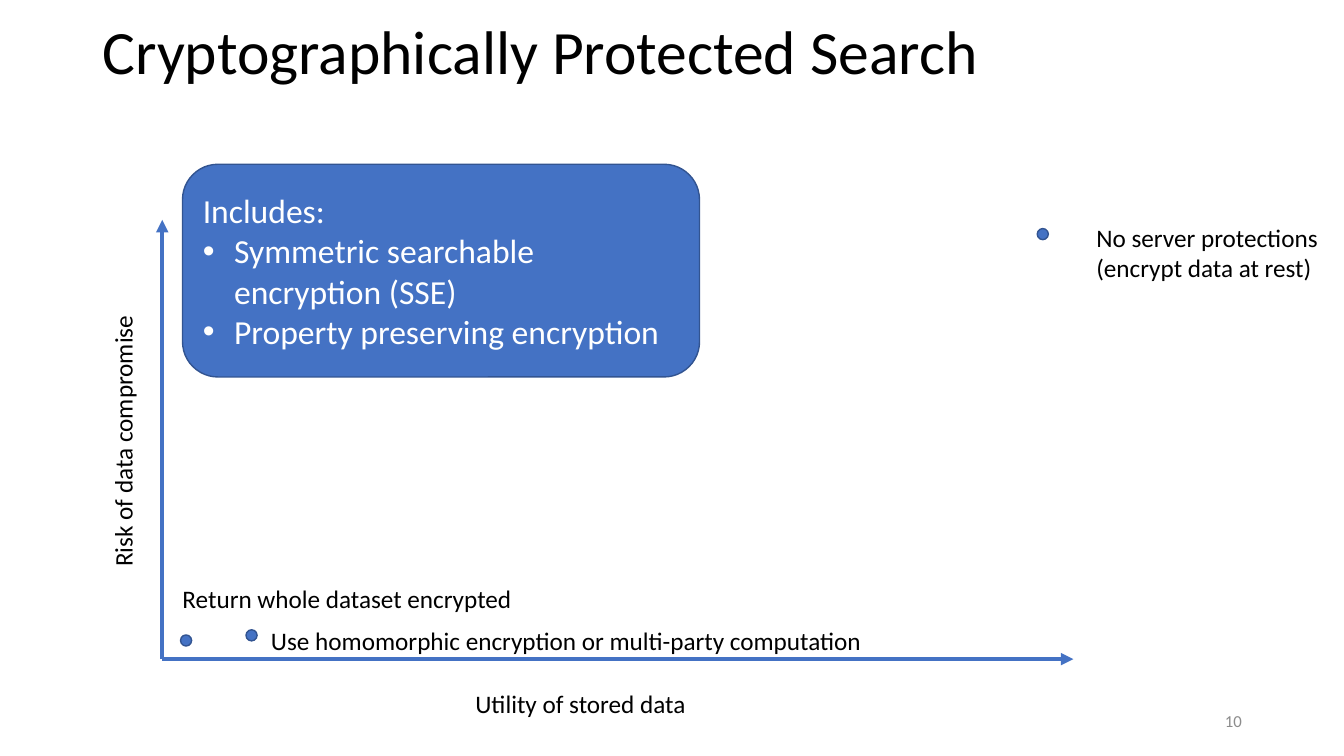
from dataclasses import dataclass

from lxml import etree
from pptx import Presentation
from pptx.dml.color import RGBColor
from pptx.enum.shapes import MSO_CONNECTOR as CONN, MSO_SHAPE as SHAPE
from pptx.enum.text import MSO_ANCHOR as ANCHOR, MSO_AUTO_SIZE as AUTO, PP_ALIGN as ALIGN
from pptx.oxml.ns import qn
from pptx.util import Cm, Pt


@dataclass(frozen=True)
class Theme:
    font: str = "Calibri"
    accent: str = "4472C4"
    outline: str = "325491"
    ink: str = "000000"
    light: str = "FFFFFF"
    muted: str = "8C8C8C"
    title: int = 44
    callout: int = 24
    label: int = 18
    footer: int = 12


THEME = Theme()


def rgb(value):
    return RGBColor.from_string(value)


def write(p, text, size=THEME.label, color=THEME.ink, align=ALIGN.LEFT):
    p.text = text
    p.alignment = align
    for r in p.runs:
        r.font.name = THEME.font
        r.font.size = Pt(size)
        r.font.color.rgb = rgb(color)


def add_label(slide, box, text, rotation=0, wrap=False, anchor=ANCHOR.TOP, **style):
    sp = slide.shapes.add_textbox(*map(Cm, box))
    sp.rotation = rotation
    tf = sp.text_frame
    tf.word_wrap = wrap
    tf.auto_size = AUTO.NONE if wrap else AUTO.SHAPE_TO_FIT_TEXT
    tf.vertical_anchor = anchor
    write(tf.paragraphs[0], text, **style)


def add_filled(slide, kind, box):
    sp = slide.shapes.add_shape(kind, *map(Cm, box))
    sp.shadow.inherit = False
    sp.fill.solid()
    sp.fill.fore_color.rgb = rgb(THEME.accent)
    sp.line.color.rgb = rgb(THEME.outline)
    sp.line.width = Pt(1)
    return sp


def add_axis(slide, start, end):
    line = slide.shapes.add_connector(CONN.STRAIGHT, *map(Cm, start + end))
    line.line.color.rgb = rgb(THEME.accent)
    line.line.width = Pt(3)
    etree.SubElement(line.line._get_or_add_ln(), qn("a:tailEnd"), type="triangle")
    etree.SubElement(line._element.spPr, qn("a:effectLst"))


def add_point(slide, center, text, offset, size):
    x, y = center
    d = 0.28
    add_filled(slide, SHAPE.OVAL, (x - d / 2, y - d / 2, d, d))
    add_label(slide, (x + offset[0], y + offset[1], *size), text)


def add_title(slide, box, text):
    sp = slide.shapes.title
    sp.left, sp.top, sp.width, sp.height = map(Cm, box)
    tf = sp.text_frame
    tf.word_wrap = True
    tf.vertical_anchor = ANCHOR.MIDDLE
    p = tf.paragraphs[0]
    write(p, text, size=THEME.title)
    p.line_spacing = 0.9


def add_plot(slide, box):
    x, y, w, h = box
    bottom = y + h
    add_axis(slide, (x, bottom), (x, y))
    add_axis(slide, (x, bottom), (x + w, bottom))
    add_label(slide, (x + 7.64, bottom + 0.61, 5.87, 1.02), "Utility of stored data")
    add_label(slide, (x - 4.45, y + 5.03, 6.91, 1.02), "Risk of data compromise", rotation=270)
    points = [
        (0.6, 0.47, "Return whole dataset encrypted", (-0.34, -1.56), (8.92, 1.02)),
        (2.25, 0.6, "Use homomorphic encryption or multi-party computation",
         (0.24, -0.39), (15.57, 1.02)),
        (22.19, 10.71, "No server protections\v(encrypt data at rest)", (1.1, -0.42), (6.3, 1.8)),
    ]
    for utility, risk, text, offset, size in points:
        add_point(slide, (x + utility, bottom - risk), text, offset, size)


def add_callout(slide, box, heading, items):
    sp = add_filled(slide, SHAPE.ROUNDED_RECTANGLE, box)
    tf = sp.text_frame
    tf.word_wrap = True
    tf.vertical_anchor = ANCHOR.MIDDLE
    style = dict(size=THEME.callout, color=THEME.light)
    write(tf.paragraphs[0], heading, **style)
    for item in items:
        p = tf.add_paragraph()
        pPr = p._p.get_or_add_pPr()
        indent = Cm(0.79)
        pPr.set("marL", str(indent))
        pPr.set("indent", str(-indent))
        etree.SubElement(pPr, qn("a:buFont"), typeface="Arial")
        etree.SubElement(pPr, qn("a:buChar"), char="•")
        write(p, item, **style)


def add_page_number(slide, box, number):
    add_label(slide, box, number, wrap=True, anchor=ANCHOR.MIDDLE,
              size=THEME.footer, color=THEME.muted, align=ALIGN.RIGHT)


def main():
    prs = Presentation()
    prs.slide_width, prs.slide_height = Cm(33.87), Cm(19.05)
    slide = prs.slides.add_slide(prs.slide_layouts[5])
    add_title(slide, (2.33, -0.46, 29.21, 3.68), "Cryptographically Protected Search")
    add_plot(slide, (4.09, 5.54, 22.96, 11.07))
    add_callout(slide, (4.6, 4.14, 13.03, 5.36), "Includes:",
                ["Symmetric searchable encryption (SSE)", "Property preserving encryption"])
    add_page_number(slide, (23.93, 17.65, 7.62, 1.02), "10")
    prs.save("out.pptx")


if __name__ == "__main__":
    main()
